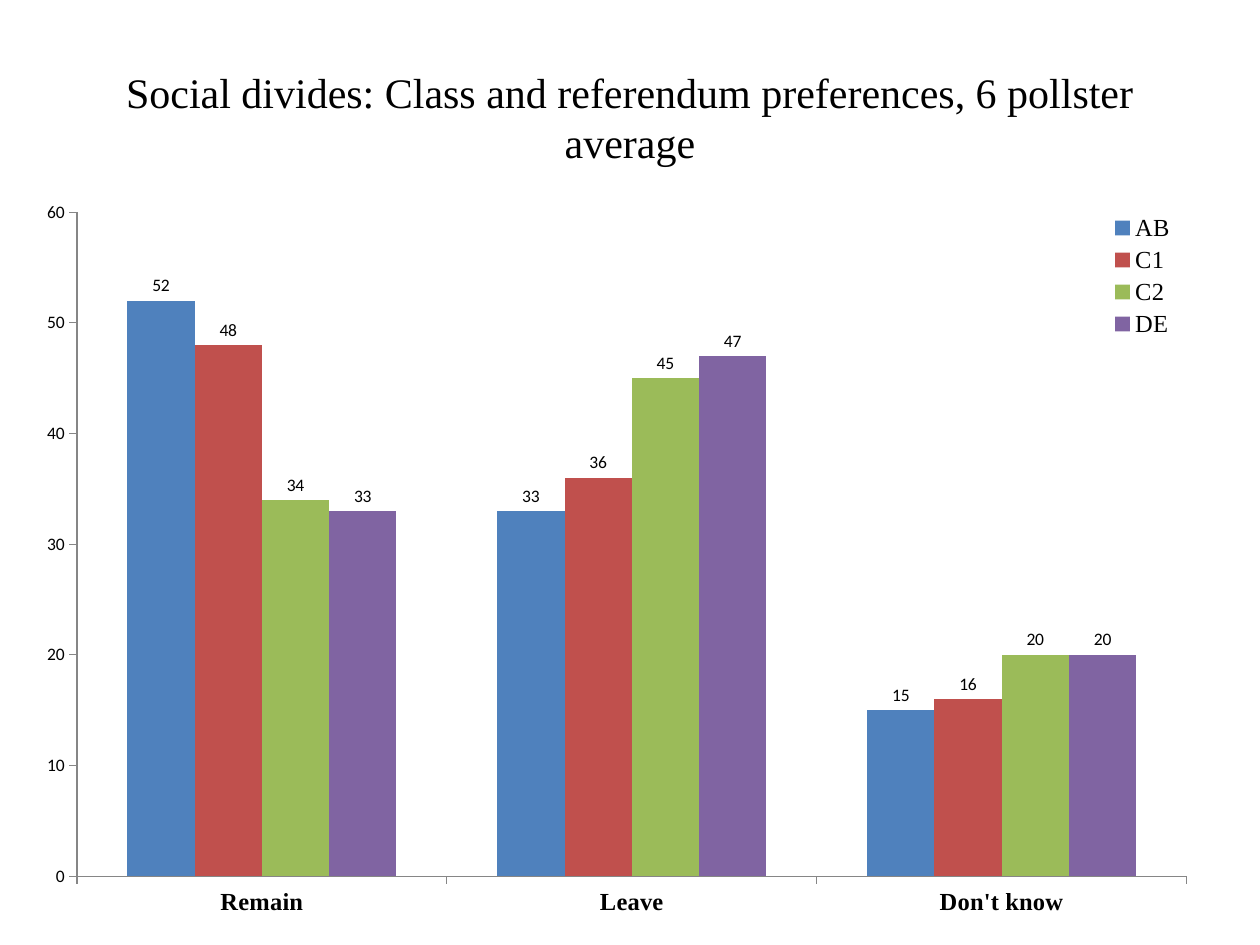
"""Build a slide with a clustered column chart of referendum preferences by class."""
from dataclasses import dataclass

from lxml import etree
from pptx import Presentation
from pptx.chart.data import CategoryChartData
from pptx.dml.color import RGBColor
from pptx.enum.chart import XL_CHART_TYPE, XL_LABEL_POSITION, XL_LEGEND_POSITION, XL_TICK_MARK
from pptx.enum.text import MSO_ANCHOR, PP_ALIGN
from pptx.oxml.ns import qn
from pptx.util import Inches, Pt

COLUMNS = XL_CHART_TYPE.COLUMN_CLUSTERED
OUTSIDE_END = XL_LABEL_POSITION.OUTSIDE_END
LEGEND_RIGHT = XL_LEGEND_POSITION.RIGHT
TICK_OUTSIDE, TICK_NONE = XL_TICK_MARK.OUTSIDE, XL_TICK_MARK.NONE
MIDDLE, CENTER = MSO_ANCHOR.MIDDLE, PP_ALIGN.CENTER


@dataclass(frozen=True)
class Theme:
    """Colours, fonts and type sizes of the slide."""
    text: str = "000000"
    axis: str = "868686"
    heading_font: str = "Times New Roman"
    value_font: str = "Calibri"
    title_size: int = 24
    label_size: int = 14
    value_size: int = 10
    classes: tuple = ("4F81BD", "C0504D", "9BBB59", "8064A2")


THEME = Theme()
TITLE = "Social divides: Class and referendum preferences, 6 pollster average"
ANSWERS = ("Remain", "Leave", "Don't know")
SHARES_BY_CLASS = {
    "AB": (52, 33, 15),
    "C1": (48, 36, 16),
    "C2": (34, 45, 20),
    "DE": (33, 47, 20),
}


def style_font(font, name, size, bold=False):
    """Apply a typeface, size, weight and the text colour to a font."""
    font.name, font.size, font.bold = name, Pt(size), bold
    font.color.rgb = RGBColor.from_string(THEME.text)


def place_in_chart(element, index, left, top, width, height, inner=False):
    """Give a chart part a manual layout in shares of the chart's size."""
    for old_layout in element.findall(qn("c:layout")):
        element.remove(old_layout)
    layout = etree.Element(qn("c:layout"))
    manual = etree.SubElement(layout, qn("c:manualLayout"))
    settings = [("layoutTarget", "inner")] if inner else []
    settings += [("xMode", "edge"), ("yMode", "edge"),
                 ("x", left), ("y", top), ("w", width), ("h", height)]
    for tag, value in settings:
        etree.SubElement(manual, qn(f"c:{tag}")).set("val", str(value))
    element.insert(index, layout)


def add_title(slide):
    """Fill and place the title placeholder."""
    title = slide.shapes.title
    title.left, title.top = Inches(0.5), Inches(0.3)
    title.width, title.height = Inches(9), Inches(1.25)
    frame = title.text_frame
    frame.text = TITLE
    frame.vertical_anchor = MIDDLE
    paragraph = frame.paragraphs[0]
    paragraph.alignment = CENTER
    style_font(paragraph.runs[0].font, THEME.heading_font, THEME.title_size)


def style_axis(axis):
    """Draw a plain axis with outside ticks and no gridlines."""
    axis.has_major_gridlines = False
    axis.major_tick_mark, axis.minor_tick_mark = TICK_OUTSIDE, TICK_NONE
    axis.format.line.color.rgb = RGBColor.from_string(THEME.axis)
    axis.format.line.width = Pt(0.75)


def style_columns(plot):
    """Colour the columns and show their values above them."""
    plot.gap_width, plot.overlap = 150, 0
    plot.vary_by_categories = False
    for series, color in zip(plot.series, THEME.classes):
        series.format.fill.solid()
        series.format.fill.fore_color.rgb = RGBColor.from_string(color)
        labels = series.data_labels
        labels.show_value = True
        labels.position = OUTSIDE_END
        style_font(labels.font, THEME.value_font, THEME.value_size)


def add_legend(chart):
    """Add the class legend at the top right, over the plot."""
    chart.has_legend = True
    legend = chart.legend
    legend.position = LEGEND_RIGHT
    legend.include_in_layout = True
    style_font(legend.font, THEME.heading_font, THEME.label_size)
    place_in_chart(legend._element, 1, 0.89, 0.02, 0.08, 0.18)


def add_preference_chart(slide):
    """Add the chart of answers by social class."""
    data = CategoryChartData()
    data.categories = ANSWERS
    for name, shares in SHARES_BY_CLASS.items():
        data.add_series(name, shares)
    chart = slide.shapes.add_chart(
        COLUMNS, Inches(0.28), Inches(1.55), Inches(9.45), Inches(5.83), data).chart
    chart.has_title = False
    style_font(chart.font, THEME.value_font, THEME.value_size)
    style_axis(chart.category_axis)
    style_axis(chart.value_axis)
    style_font(chart.category_axis.tick_labels.font, THEME.heading_font, THEME.label_size, bold=True)
    chart.value_axis.minimum_scale, chart.value_axis.maximum_scale = 0, 60
    chart.value_axis.major_unit = 10
    style_columns(chart.plots[0])
    add_legend(chart)
    plot_area = chart._chartSpace.chart.plotArea
    place_in_chart(plot_area, 0, 0.035, 0.023, 0.932, 0.904, inner=True)


def main():
    """Build and save the presentation."""
    presentation = Presentation()
    presentation.slide_width, presentation.slide_height = Inches(10), Inches(7.5)
    slide = presentation.slides.add_slide(presentation.slide_layouts.get_by_name("Title Only"))
    add_title(slide)
    add_preference_chart(slide)
    presentation.save("out.pptx")


if __name__ == "__main__":
    main()
